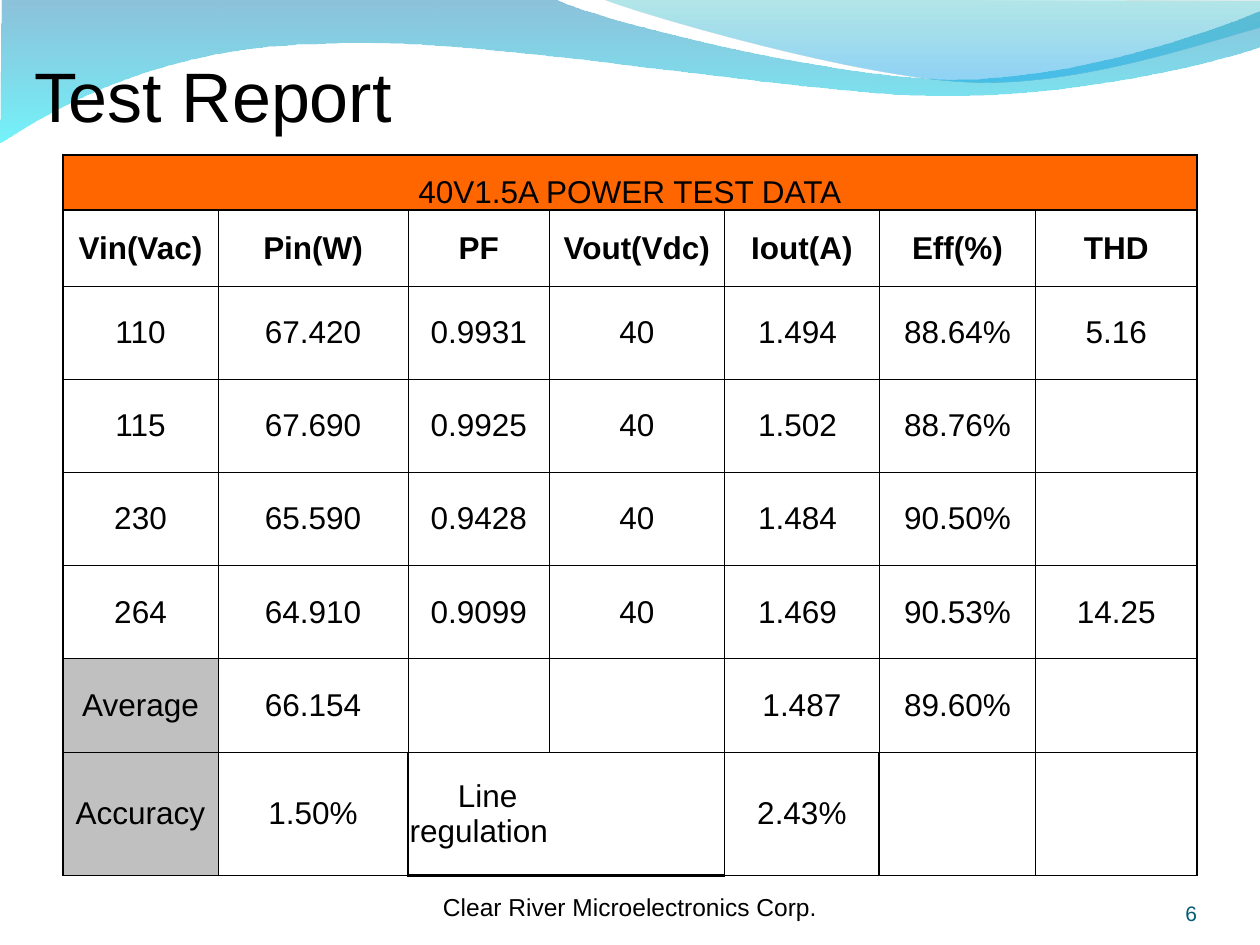
from lxml import etree
from pptx import Presentation
from pptx.dml.color import RGBColor
from pptx.enum import text
from pptx.oxml import parse_xml
from pptx.oxml.ns import nsdecls, qn
from pptx.util import Inches, Pt

BLACK, WHITE, GREY, ORANGE, TEAL = "000000", "FFFFFF", "C0C0C0", "FF6600", "045C75"
CENTER, RIGHT, LEFT = text.PP_ALIGN.CENTER, text.PP_ALIGN.RIGHT, text.PP_ALIGN.LEFT
MIDDLE, BOTTOM, TOP = text.MSO_ANCHOR.MIDDLE, text.MSO_ANCHOR.BOTTOM, text.MSO_ANCHOR.TOP

COLUMN_WIDTHS = [1.23, 1.51, 1.12, 1.39, 1.23, 1.24, 1.28]
ROW_HEIGHTS = [0.44, 0.6] + [0.74] * 5 + [0.98]
TABLE_TITLE = "40V1.5A POWER TEST DATA"
ROWS = [
    [TABLE_TITLE] + [""] * 6,
    ["Vin(Vac)", "Pin(W)", "PF", "Vout(Vdc)", "Iout(A)", "Eff(%)", "THD"],
    ["110", "67.420", "0.9931", "40", "1.494 ", "88.64%", "5.16"],
    ["115", "67.690", "0.9925", "40", "1.502 ", "88.76%", ""],
    ["230", "65.590", "0.9428", "40", "1.484 ", "90.50%", ""],
    ["264", "64.910", "0.9099", "40", "1.469 ", "90.53%", "14.25"],
    ["Average", "66.154", "", "", "1.487", "89.60%", ""],
    ["Accuracy", "1.50%", "Line regulation", "", "2.43%", "", ""],
]
THIN, THICK = 0.5, 1.2
LAST = len(ROWS) - 1
VERTICAL_LINES = {0: [THICK] * 8, LAST: [THICK, THIN, 1.5, 0, 1, THICK, THIN, THICK]}
INNER_VERTICALS = [THICK] + [THIN] * 6 + [THICK]
HORIZONTAL_LINES = [THICK, THICK] + [THIN] * 6 + [THICK]

LARGE_WAVE = [
    (0.01, 0), (4.41, 0),
    (4.76, 0.17, 6.64, 0.63, 7.59, 0.63),
    (8.53, 0.63, 9.58, 0.26, 10, 0.09),
    (10.01, 0.37),
    (9.83, 0.44, 8.7, 0.76, 7.46, 0.76),
    (6.22, 0.75, 3.82, 0.28, 2.58, 0.35),
    (1.3, 0.36, 0.47, 0.83, 0, 1.13),
]
SMALL_WAVE = [
    (4.79, 0),
    (5.09, 0.12, 6.82, 0.62, 7.69, 0.65),
    (8.56, 0.69, 9.61, 0.32, 10, 0.22),
    (10, 0.01),
]


def color(value):
    return RGBColor.from_string(value)


def bend_curves(shape, segments):
    lines = iter(list(shape.element.iter(qn("a:lnTo"))))
    for segment in segments[1:]:
        line = next(lines)
        if len(segment) == 6:
            line.tag = qn("a:cubicBezTo")
            for _ in range(2):
                control = next(lines)
                line.append(control[0])
                control.getparent().remove(control)


def add_wave(slide, segments, stops):
    points = [
        (Inches(x), Inches(y))
        for segment in segments
        for x, y in zip(segment[::2], segment[1::2])
    ]
    builder = slide.shapes.build_freeform(*points[0])
    builder.add_line_segments(points[1:], close=True)
    shape = builder.convert_to_shape()
    replace_lines = [line for line in shape.element.iter(qn("a:lnTo"))]
    if len(replace_lines) >= len(points) - 1:
        bend_curves(shape, segments)
    shape.shadow.inherit = False
    shape.line.fill.background()
    stop_xml = "".join(
        f'<a:gs pos="{position * 1000}"><a:srgbClr val="{value}">'
        f'<a:alpha val="{opacity * 1000}"/></a:srgbClr></a:gs>'
        for position, value, opacity in stops
    )
    gradient = parse_xml(
        f'<a:gradFill {nsdecls("a")} rotWithShape="1"><a:gsLst>{stop_xml}</a:gsLst>'
        '<a:lin ang="5400000" scaled="0"/></a:gradFill>'
    )
    shape.element.spPr.find(qn("a:custGeom")).addnext(gradient)


def write(paragraph, words, size, value=BLACK, align=CENTER, bold=False):
    paragraph.alignment = align
    run = paragraph.add_run()
    run.text = words
    for name, setting in {"name": "Arial", "size": Pt(size), "bold": bold}.items():
        setattr(run.font, name, setting)
    run.font.color.rgb = color(value)


def fill_text_shape(shape, words, size, frame_format, **style):
    for name, setting in {"word_wrap": True, **frame_format}.items():
        setattr(shape.text_frame, name, setting)
    write(shape.text_frame.paragraphs[0], words, size, **style)


def add_label(slide, box, words, size, frame_format, **style):
    label = slide.shapes.add_textbox(*map(Inches, box))
    fill_text_shape(label, words, size, frame_format, **style)


def place_title(slide, words):
    title = slide.shapes.title
    box = {"left": 0.27, "top": 0.05, "width": 7.09, "height": 1.03}
    for name, length in box.items():
        setattr(title, name, Inches(length))
    frame_format = {
        "auto_size": text.MSO_AUTO_SIZE.NONE, "vertical_anchor": BOTTOM,
        "margin_left": 0, "margin_top": Inches(0.05), "margin_right": 0, "margin_bottom": 0,
    }
    fill_text_shape(title, words, 40, frame_format, align=LEFT)
    slide.shapes.element.append(title.element)


def set_borders(cell, widths):
    properties = cell._tc.get_or_add_tcPr()
    for index, (side, width) in enumerate(zip("LRTB", widths)):
        line = etree.Element(qn(f"a:ln{side}"), w=str(Pt(width)))
        if width:
            fill = etree.SubElement(line, qn("a:solidFill"))
            etree.SubElement(fill, qn("a:srgbClr"), val=BLACK)
        else:
            etree.SubElement(line, qn("a:noFill"))
        properties.insert(index, line)


def cell_fill(row, column):
    if row == 0:
        return ORANGE
    if row < LAST - 1 or (row == LAST and column in (2, 3)):
        return None
    return GREY if column == 0 else WHITE


def format_cell(cell, row, column, words):
    cell_format = {
        "margin_left": 0, "margin_right": 0, "margin_top": 0, "margin_bottom": 0,
        "vertical_anchor": BOTTOM if row == 0 else MIDDLE,
    }
    for name, setting in cell_format.items():
        setattr(cell, name, setting)
    fill_value = cell_fill(row, column)
    if fill_value:
        cell.fill.solid()
        cell.fill.fore_color.rgb = color(fill_value)
    else:
        cell.fill.background()
    verticals = VERTICAL_LINES.get(row, INNER_VERTICALS)
    bottom = 1.5 if row == LAST and column in (2, 3) else HORIZONTAL_LINES[row + 1]
    set_borders(cell, [verticals[column], verticals[column + 1], HORIZONTAL_LINES[row], bottom])
    if words:
        paragraph = cell.text_frame.paragraphs[0]
        write(paragraph, words, 18, bold=row == 1)
        if words == "Line regulation":
            paragraph._p.get_or_add_pPr().set("indent", str(Pt(10)))


def add_test_table(slide):
    box = map(Inches, (0.5, 1.23, sum(COLUMN_WIDTHS), sum(ROW_HEIGHTS)))
    table = slide.shapes.add_table(len(ROWS), len(COLUMN_WIDTHS), *box).table
    table.first_row = table.horz_banding = False
    for column, width in zip(table.columns, COLUMN_WIDTHS):
        column.width = Inches(width)
    for row, height in zip(table.rows, ROW_HEIGHTS):
        row.height = Inches(height)
    table.cell(0, 0).merge(table.cell(0, len(COLUMN_WIDTHS) - 1))
    for row, values in enumerate(ROWS):
        for column, words in enumerate(values):
            format_cell(table.cell(row, column), row, column, words)


def main():
    presentation = Presentation()
    presentation.slide_width, presentation.slide_height = Inches(10), Inches(7.5)
    slide = presentation.slides.add_slide(presentation.slide_layouts[5])
    add_wave(slide, LARGE_WAVE, [(0, "0079AF", 45), (100, "00EBF8", 55)])
    add_wave(slide, SMALL_WAVE, [(0, "00ADB6", 30), (80, "009BE5", 42), (100, "009BE5", 45)])
    add_label(slide, (2.89, 7.03, 4.22, 0.33), "Clear River Microelectronics Corp.", 14,
              {"vertical_anchor": TOP})
    number_format = {
        "vertical_anchor": BOTTOM,
        "margin_left": 0, "margin_right": 0, "margin_top": 0, "margin_bottom": 0,
    }
    add_label(slide, (8.67, 6.95, 0.83, 0.4), "6", 12, number_format, value=TEAL, align=RIGHT)
    place_title(slide, "Test Report")
    add_test_table(slide)
    presentation.save("out.pptx")


if __name__ == "__main__":
    main()
